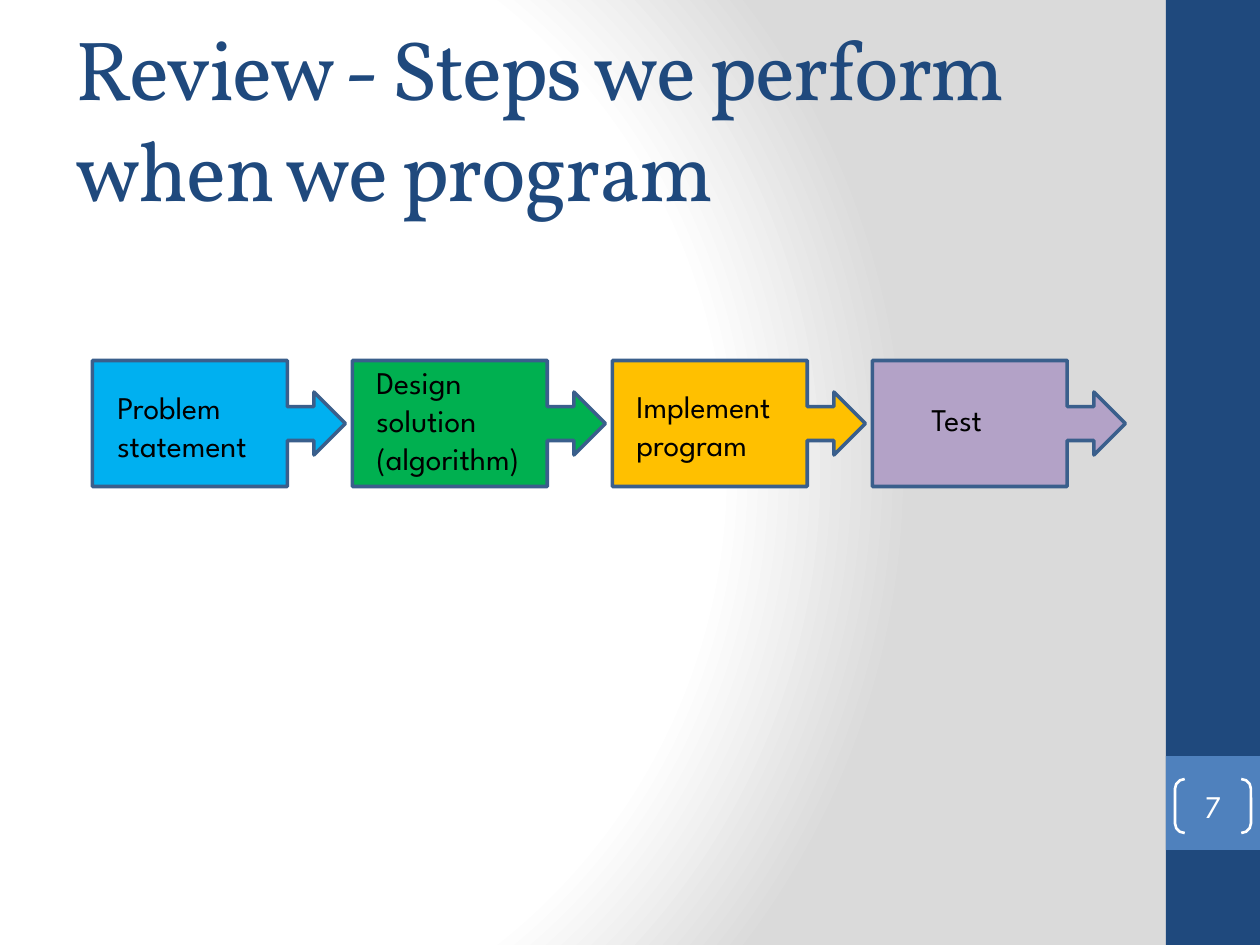
"""Build the review slide on the steps of programming."""
from lxml.etree import SubElement as Sub
from pptx import Presentation
from pptx.dml.color import RGBColor as Rgb
from pptx.enum.shapes import MSO_SHAPE as Kind
from pptx.enum.text import MSO_ANCHOR as Anchor, MSO_AUTO_SIZE as Auto, PP_ALIGN as Align
from pptx.oxml.ns import qn
from pptx.util import Pt

HUES = {"navy": "1F497D", "blue": "4F81BD", "edge": "3A5F8C", "sky": "00B0F0",
        "green": "00B050", "gold": "FFC000", "mauve": "B3A2C7",
        "white": "FFFFFF", "gray": "DADADA", "black": "000000"}
SANS, SERIF = "League Spartan", "Vollkorn"


def shape(kind, box, fill=None, line=None, width=2):
    item = slide.shapes.add_shape(kind, *[round(n * 914400 / 126) for n in box])
    item.shadow.inherit = False
    if fill:
        item.fill.solid()
        item.fill.fore_color.rgb = Rgb.from_string(HUES[fill])
    else:
        item.fill.background()
    if line:
        item.line.color.rgb = Rgb.from_string(HUES[line])
        item.line.width = Pt(width)
    else:
        item.line.fill.background()
    return item


def write(frame, lines, hue, size=18, face=SANS, align=Align.LEFT, **form):
    for key, val in form.items():
        setattr(frame, key, val)
    frame.text = "\n".join(lines)
    for para in frame.paragraphs:
        para.alignment = align
        for run in para.runs:
            for key, val in {"size": Pt(size), "name": face}.items():
                setattr(run.font, key, val)
            run.font.color.rgb = Rgb.from_string(HUES[hue])


deck = Presentation()
deck.slide_width, deck.slide_height = 9144000, 6858000
slide = deck.slides.add_slide(deck.slide_layouts[6])

back = slide.background.fill
back.gradient()
grad = slide.background._cSld.find(".//" + qn("a:gradFill"))
for part in list(grad):
    grad.remove(part)
stops = Sub(grad, qn("a:gsLst"))
for pos, hue in [(0, "white"), (75, "white"), (100, "gray")]:
    stop = Sub(stops, qn("a:gs"), pos=str(pos * 1000))
    Sub(stop, qn("a:srgbClr"), val=HUES[hue])
ring = Sub(grad, qn("a:path"), path="circle")
Sub(ring, qn("a:fillToRect"), l="20000", t="50000", r="100000", b="50000")

shape(Kind.RECTANGLE, (1166, 0, 94, 945), "navy")
shape(Kind.RECTANGLE, (1166, 756, 94, 94), "blue")

title = slide.shapes.add_textbox(*[round(n * 914400 / 126) for n in (63, 38, 1050, 158)])
write(title.text_frame, ["Review - Steps we perform when we program"], "navy", 48, SERIF,
      word_wrap=True, vertical_anchor=Anchor.MIDDLE)
title.text_frame.paragraphs[0].runs[0]._r.get_or_add_rPr().set("spc", "-100")

steps = [("sky", ["Problem", "statement"], (105, 382, 183, 127)),
         ("green", ["Design\vsolution", "(algorithm)"], (364, 357, 195, 165)),
         ("gold", ["Implement", "program"], (624, 381, 193, 89)),
         ("mauve", ["Test"], (919, 394, 83, 50))]
for i, (hue, lines, box) in enumerate(steps):
    step = shape(Kind.DOWN_ARROW_CALLOUT, (156 + 260 * i, 297, 126, 253), hue, "edge")
    step.rotation = 270
    for k, val in enumerate((0.27, 0.25, 0.25, 0.77)):
        step.adjustments[k] = val
    label = slide.shapes.add_textbox(*[round(n * 914400 / 126) for n in box])
    write(label.text_frame, lines, "black", word_wrap=False, auto_size=Auto.SHAPE_TO_FIT_TEXT)

page = shape(Kind.DOUBLE_BRACKET, (1175, 779, 76, 54), None, "white", 1.5)
page.adjustments[0] = 0.18
write(page.text_frame, ["7"], "white", align=Align.CENTER, vertical_anchor=Anchor.MIDDLE,
      margin_left=0, margin_top=0, margin_right=0, margin_bottom=0)

deck.save("out.pptx")
